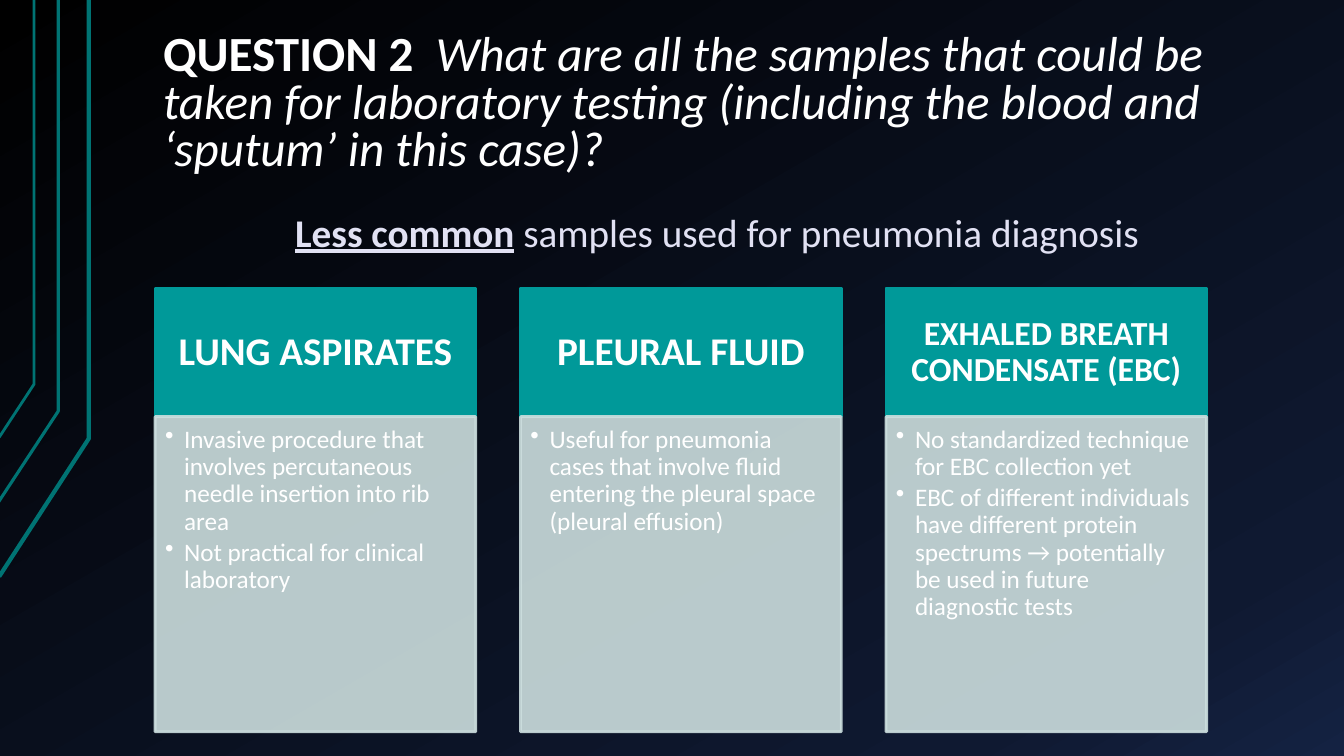
"""Build the slide on less common samples for pneumonia diagnosis."""
from lxml.etree import SubElement
from pptx import Presentation
from pptx.dml.color import RGBColor as RGB
from pptx.enum.shapes import MSO_SHAPE as SHAPE
from pptx.enum.text import MSO_ANCHOR as ANCHOR, MSO_AUTO_SIZE as AUTO, PP_ALIGN as ALIGN
from pptx.oxml.ns import qn
from pptx.util import Cm, Pt

COLORS = {"white": "FFFFFF", "lavender": "E1E1F3", "teal": "009999",
          "mist": "CCDEDE", "trace": "007373"}
BACKDROP = [(0, "000000"), (85, "0F1931"), (100, "142242")]
TRACES = [
    (3, [(-0.02, 14.53), (2.24, 11.05), (2.24, 0)]),
    (2.25, [(-0.05, 12.67), (1.47, 10.36), (1.47, 0)]),
    (2, [(-0.02, 11.02), (0.86, 9.68), (0.86, 0)]),
]
SAMPLES = [
    ("LUNG ASPIRATES", 28,
     ["Invasive procedure that involves percutaneous needle insertion into rib area",
      "Not practical for clinical laboratory"]),
    ("PLEURAL FLUID", 28,
     ["Useful for pneumonia cases that involve fluid entering the pleural space "
      "(pleural effusion)"]),
    ("EXHALED BREATH CONDENSATE (EBC)", 24,
     ["No standardized technique for EBC collection yet",
      "EBC of different individuals have different protein spectrums → potentially "
      "be used in future diagnostic tests"]),
]


def add_text(p, text, size=18, color="white", bold=False, italic=False, underline=False):
    r = p.add_run()
    r.text = text
    f = r.font
    f.name, f.size, f.bold, f.italic, f.underline = "Calibri", Pt(size), bold, italic, underline
    f.color.rgb = RGB.from_string(COLORS[color])


class Deck:
    def __init__(self):
        self.prs = Presentation()
        self.prs.slide_width, self.prs.slide_height = Cm(33.87), Cm(19.05)
        self.s = self.prs.slides.add_slide(self.prs.slide_layouts[6])

    def backdrop(self, stops, angle):
        fill = self.s.background.fill
        fill.gradient()
        fill.gradient_angle = 360 - angle
        gs_list = next(self.s.background._cSld.iter(qn("a:gsLst")))
        for gs in list(gs_list):
            gs_list.remove(gs)
        for pos, color in stops:
            gs = SubElement(gs_list, qn("a:gs"), pos=str(pos * 1000))
            SubElement(gs, qn("a:srgbClr"), val=color)

    def trace(self, points, width):
        start, *rest = [(Cm(x), Cm(y)) for x, y in points]
        builder = self.s.shapes.build_freeform(*start)
        builder.add_line_segments(rest, close=False)
        sp = builder.convert_to_shape()
        sp.shadow.inherit = False
        sp.fill.background()
        sp.line.color.rgb = RGB.from_string(COLORS["trace"])
        sp.line.width = Pt(width)

    def frame(self, sp, insets, anchor, wrap=True):
        tf = sp.text_frame
        tf.word_wrap, tf.vertical_anchor = wrap, anchor
        tf.margin_left, tf.margin_top, tf.margin_right, tf.margin_bottom = map(Cm, insets)
        return tf

    def textbox(self, box, insets, anchor=ANCHOR.TOP, wrap=True):
        sp = self.s.shapes.add_textbox(*map(Cm, box))
        return self.frame(sp, insets, anchor, wrap)

    def panel(self, box, color, insets, anchor, alpha=None):
        sp = self.s.shapes.add_shape(SHAPE.RECTANGLE, *map(Cm, box))
        sp.shadow.inherit = False
        sp.fill.solid()
        sp.fill.fore_color.rgb = sp.line.color.rgb = RGB.from_string(COLORS[color])
        sp.line.width = Pt(2)
        if alpha:
            for clr in sp._element.spPr.iter(qn("a:srgbClr")):
                SubElement(clr, qn("a:alpha"), val=str(alpha * 1000))
        return self.frame(sp, insets, anchor)

    def bullets(self, tf, items):
        for i, item in enumerate(items):
            p = tf.add_paragraph() if i else tf.paragraphs[0]
            p.alignment, p.line_spacing, p.space_after = ALIGN.LEFT, 0.9, Pt(2.7)
            pPr = p._p.get_or_add_pPr()
            pPr.set("marL", str(Cm(0.48)))
            pPr.set("indent", str(Cm(-0.48)))
            SubElement(pPr, qn("a:buChar"), char="•")
            add_text(p, item)

    def card(self, left, title, size, items):
        tf = self.panel((left, 7.26, 8.08, 3.24), "teal", (0.5, 0.3, 0.5, 0.3), ANCHOR.MIDDLE)
        p = tf.paragraphs[0]
        p.alignment, p.line_spacing = ALIGN.CENTER, 0.9
        add_text(p, title, size=size, bold=True)
        tf = self.panel((left, 10.5, 8.08, 7.94), "mist", (0.25, 0.25, 0.36, 0.4),
                        ANCHOR.TOP, alpha=90)
        self.bullets(tf, items)


def main():
    deck = Deck()
    deck.backdrop(BACKDROP, 60)
    for width, points in TRACES:
        deck.trace(points, width)

    tf = deck.textbox((3.77, 0.43, 28.78, 4.17), (0.34, 0.17, 0.34, 0.17), ANCHOR.BOTTOM)
    p = tf.paragraphs[0]
    p.line_spacing = 0.8
    add_text(p, "QUESTION 2  ", size=35.1, bold=True)
    add_text(p, "What are all the samples that could be taken for laboratory testing "
             "(including the blood and ‘sputum’ in this case)?", size=35.1, italic=True)

    tf = deck.textbox((7.19, 5.11, 21.92, 1.45), (0.25, 0.13, 0.25, 0.13), wrap=False)
    tf.auto_size = AUTO.SHAPE_TO_FIT_TEXT
    p = tf.paragraphs[0]
    add_text(p, "Less common", size=28, color="lavender", bold=True, underline=True)
    add_text(p, " samples used for pneumonia diagnosis", size=28, color="lavender")

    for i, sample in enumerate(SAMPLES):
        deck.card(3.91 + i * 9.21, *sample)
    deck.prs.save("out.pptx")


if __name__ == "__main__":
    main()
